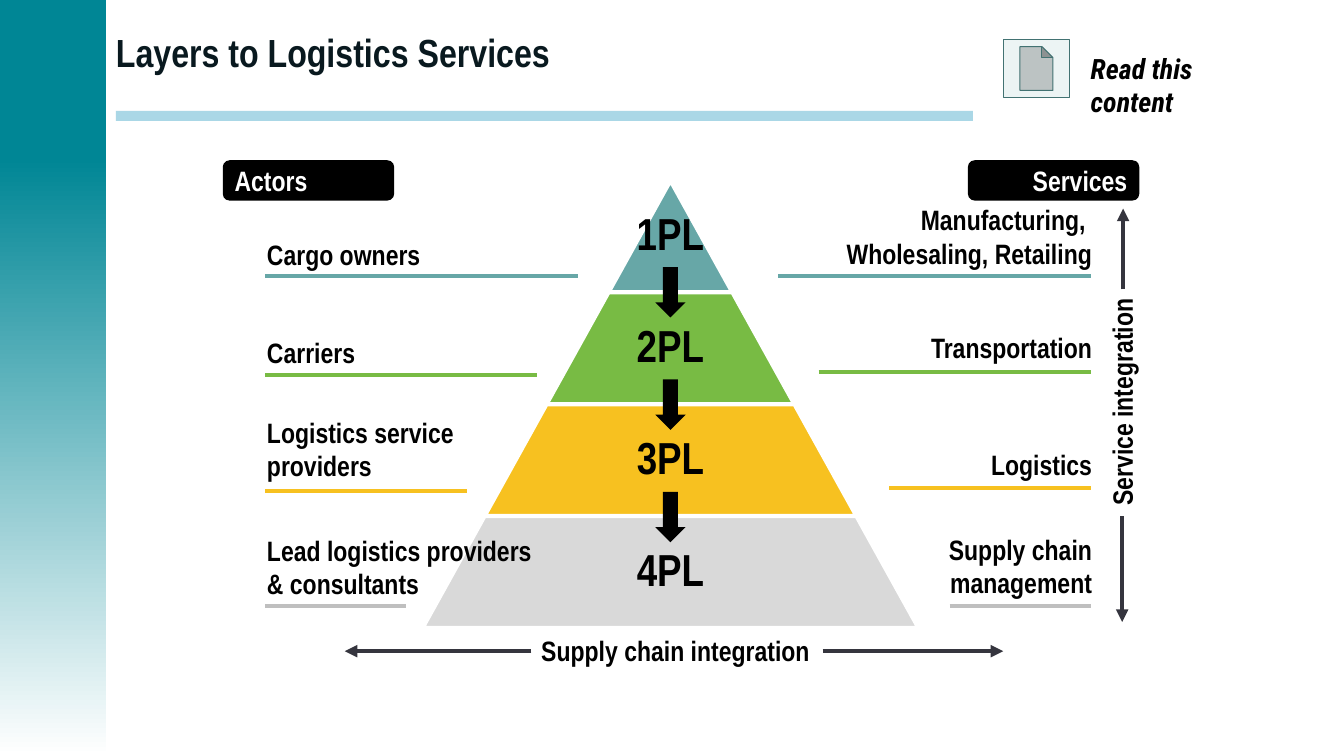
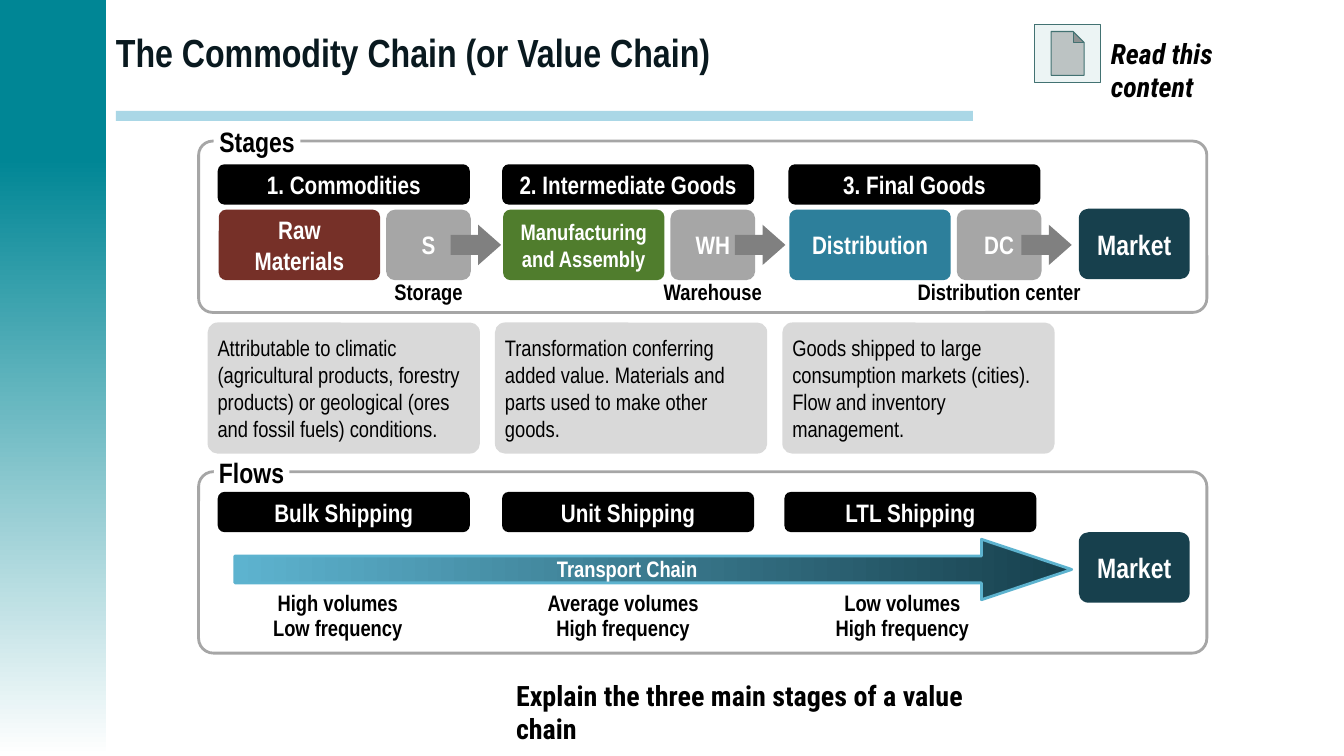
from dataclasses import dataclass, replace
from typing import NamedTuple, Optional

from lxml.etree import SubElement
from pptx import Presentation
from pptx.dml.color import RGBColor
from pptx.enum.shapes import MSO_CONNECTOR, MSO_SHAPE
from pptx.enum.text import MSO_ANCHOR, PP_ALIGN
from pptx.oxml.ns import qn
from pptx.util import Inches, Pt


@dataclass(frozen=True)
class Theme:
    narrow: str = "Arial Narrow"
    condensed: str = "Roboto Condensed"
    title_size: int = 28
    tier_size: int = 32
    label_size: int = 20
    stage_size: int = 18
    detail_size: int = 16
    white: str = "FFFFFF"
    black: str = "000000"
    title: str = "09191F"
    band: str = "008695"
    rule: str = "AAD7E6"
    icon_fill: str = "ECF4F4"
    icon_line: str = "427272"
    arrow: str = "35353E"
    teal: str = "67A7A7"
    green: str = "78BB44"
    yellow: str = "F7C120"
    light_gray: str = "D9D9D9"
    underline_gray: str = "BFBFBF"
    gray: str = "A6A6A6"
    dark_gray: str = "808080"
    navy: str = "17404D"
    sky: str = "5DB3CF"
    maroon: str = "763028"
    forest: str = "507D2D"
    ocean: str = "2D7F9B"


THEME = Theme()


class Box(NamedTuple):
    left: float
    top: float
    width: float
    height: float

    def lengths(self) -> list:
        return [Inches(value) for value in self]


@dataclass(frozen=True)
class TextStyle:
    size: int = THEME.label_size
    color: str = THEME.black
    font: str = THEME.narrow
    bold: bool = True
    italic: bool = False
    align: PP_ALIGN = PP_ALIGN.LEFT
    anchor: MSO_ANCHOR = MSO_ANCHOR.TOP
    spacing: float = 1.0
    inset_x: float = 0.1
    inset_y: float = 0.05


LABEL = TextStyle()
CENTERED_LABEL = replace(LABEL, align=PP_ALIGN.CENTER)
RIGHT_LABEL = replace(LABEL, align=PP_ALIGN.RIGHT)
PROMPT = replace(LABEL, font=THEME.condensed)
TITLE = replace(LABEL, size=THEME.title_size, color=THEME.title, anchor=MSO_ANCHOR.MIDDLE)
TIER = replace(CENTERED_LABEL, size=THEME.tier_size, anchor=MSO_ANCHOR.MIDDLE, spacing=0.9)
BUTTON = replace(CENTERED_LABEL, color=THEME.white, anchor=MSO_ANCHOR.MIDDLE)
STAGE = replace(BUTTON, size=THEME.stage_size)
PANEL_LABEL = replace(CENTERED_LABEL, spacing=0.8, inset_x=0.02, inset_y=0)
DETAIL = replace(CENTERED_LABEL, size=THEME.detail_size, spacing=0.9)
CAPTION = replace(DETAIL, inset_x=0, inset_y=0)
NOTE = TextStyle(size=THEME.detail_size, bold=False, anchor=MSO_ANCHOR.MIDDLE, inset_x=0.07)


@dataclass(frozen=True)
class Layer:
    name: str
    color: str
    underline_color: str
    underline_width: float
    actor: str
    actor_top: float
    actor_line: float
    service: str
    service_top: float
    service_line: float


@dataclass(frozen=True)
class Stage:
    left: float
    header: str
    process: str
    process_size: int
    color: str
    storage: str
    caption: str
    note: str
    shipping: str
    shipping_left: float
    volumes: str
    volumes_center: float


LAYERS = (
    Layer("1PL", THEME.teal, THEME.teal, 3.1, "Cargo owners", 2.31, 2.74,
          "Manufacturing, \nWholesaling, Retailing", 1.96, 2.74),
    Layer("2PL", THEME.green, THEME.green, 2.7, "Carriers", 3.28, 3.72,
          "Transportation", 3.23, 3.69),
    Layer("3PL", THEME.yellow, THEME.yellow, 2.0, "Logistics service\vproviders", 4.07, 4.87,
          "Logistics", 4.39, 4.84),
    Layer("4PL", THEME.light_gray, THEME.underline_gray, 1.4,
          "Lead logistics providers\v& consultants", 5.24, 6.01,
          "Supply chain\vmanagement", 5.23, 6.01),
)

STAGES = (
    Stage(2.16, "1. Commodities", "Raw Materials", THEME.stage_size, THEME.maroon, "S", "Storage",
          "Attributable to climatic (agricultural products, forestry products) "
          "or geological (ores and fossil fuels) conditions.",
          "Bulk Shipping", 2.16, "High volumes\nLow frequency", 3.35),
    Stage(4.98, "2. Intermediate Goods", "Manufacturing and Assembly", THEME.detail_size,
          THEME.forest, "WH", "Warehouse",
          "Transformation conferring added value. Materials and parts used to make other goods.",
          "Unit Shipping", 4.98, "Average volumes\nHigh frequency", 6.18),
    Stage(7.82, "3. Final Goods", "Distribution", THEME.stage_size, THEME.ocean, "DC",
          "Distribution center",
          "Goods shipped to large consumption markets (cities). Flow and inventory management.",
          "LTL Shipping", 7.78, "Low volumes\nHigh frequency", 8.95),
)


def rgb(color: str) -> RGBColor:
    return RGBColor.from_string(color)


def write_text(shape, text: str, style: TextStyle) -> None:
    frame = shape.text_frame
    frame.text = text
    frame.word_wrap = True
    frame.vertical_anchor = style.anchor
    frame.margin_left = frame.margin_right = Inches(style.inset_x)
    frame.margin_top = frame.margin_bottom = Inches(style.inset_y)
    for paragraph in frame.paragraphs:
        paragraph.alignment = style.align
        paragraph.line_spacing = style.spacing
        font = paragraph.font
        font.name, font.size = style.font, Pt(style.size)
        font.bold, font.italic = style.bold, style.italic
        font.color.rgb = rgb(style.color)


def paint(shape, fill: Optional[str], line: Optional[str] = None, width: float = 1) -> None:
    shape.shadow.inherit = False
    if fill:
        shape.fill.solid()
        shape.fill.fore_color.rgb = rgb(fill)
    else:
        shape.fill.background()
    if line:
        shape.line.color.rgb = rgb(line)
        shape.line.width = Pt(width)
    else:
        shape.line.fill.background()


def paint_gradient(shape, start: str, end: str, angle: float) -> None:
    shape.fill.gradient()
    shape.fill.gradient_angle = angle
    for stop, color in zip(shape.fill.gradient_stops, (start, end)):
        stop.color.rgb = rgb(color)


def add_box(slide, kind: MSO_SHAPE, box: Box, fill: Optional[str], text: str = "",
            style: TextStyle = LABEL, line: Optional[str] = None, width: float = 1,
            adjustments: tuple = ()):
    shape = slide.shapes.add_shape(kind, *box.lengths())
    for index, value in enumerate(adjustments):
        shape.adjustments[index] = value
    paint(shape, fill, line, width)
    if text:
        write_text(shape, text, style)
    return shape


def add_rounded(slide, box: Box, fill: str, text: str, style: TextStyle, corner: float = 0.1667):
    return add_box(slide, MSO_SHAPE.ROUNDED_RECTANGLE, box, fill, text, style, adjustments=(corner,))


def add_text(slide, box: Box, text: str, style: TextStyle = LABEL):
    shape = slide.shapes.add_textbox(*box.lengths())
    write_text(shape, text, style)
    return shape


def add_line(slide, start: tuple, end: tuple, color: str, arrow: bool = False) -> None:
    points = [Inches(value) for value in (*start, *end)]
    connector = slide.shapes.add_connector(MSO_CONNECTOR.STRAIGHT, *points)
    connector.line.color.rgb = rgb(color)
    connector.line.width = Pt(3)
    if arrow:
        SubElement(connector.line._get_or_add_ln(), qn("a:tailEnd"), type="triangle")
    SubElement(connector.element.spPr, qn("a:effectLst"))


def decorate_layout(layout, slide) -> None:
    top_band = add_box(slide, MSO_SHAPE.RECTANGLE, Box(-0.02, -0.01, 1.07, 1.58), THEME.band)
    fading_band = add_box(slide, MSO_SHAPE.RECTANGLE, Box(-0.02, 1.57, 1.07, 5.93), THEME.band)
    paint_gradient(fading_band, THEME.band, THEME.white, 270)
    rule = add_box(slide, MSO_SHAPE.RECTANGLE, Box(1.15, 1.1, 8.5, 0.1), THEME.rule)
    for shape in (top_band, fading_band, rule):
        layout.shapes.element.append(shape.element)


def start_slide(slide, title: str, icon_left: float, icon_top: float, prompt_left: float) -> None:
    placeholder = slide.shapes.title
    placeholder.left, placeholder.top, placeholder.width, placeholder.height = \
        Box(1.05, 0.01, 11.98, 1).lengths()
    write_text(placeholder, title, TITLE)
    add_box(slide, MSO_SHAPE.ACTION_BUTTON_DOCUMENT, Box(icon_left, icon_top, 0.66, 0.58),
            THEME.icon_fill, line=THEME.icon_line, width=0.75)
    add_text(slide, Box(prompt_left, icon_top + 0.07, 1.5, 0.77), "Read this content",
             replace(PROMPT, italic=True))


def add_tier(slide, index: int, layer: Layer) -> None:
    center, apex, height, spread = 6.65, 1.79, 1.11, 0.615
    top, bottom = apex + index * height, apex + (index + 1) * height
    upper, lower = index * spread, (index + 1) * spread
    corners = [(center - lower, bottom), (center - upper, top),
               (center + upper, top), (center + lower, bottom)]
    points = [(Inches(x), Inches(y)) for x, y in corners]
    builder = slide.shapes.build_freeform(*points[0])
    builder.add_line_segments(points[1:], close=True)
    tier = builder.convert_to_shape()
    paint(tier, layer.color, THEME.white, 3)
    write_text(tier, layer.name, TIER)


def build_layers(slide) -> None:
    start_slide(slide, "Layers to Logistics Services", 9.95, 0.39, 10.72)
    line_left, line_right = 2.63, 10.82
    for index, layer in enumerate(LAYERS):
        add_tier(slide, index, layer)
    for index, layer in enumerate(LAYERS):
        if index:
            add_box(slide, MSO_SHAPE.DOWN_ARROW, Box(6.5, 2.65 + (index - 1) * 1.115, 0.3, 0.5),
                    THEME.black)
        add_text(slide, Box(2.55, layer.actor_top, 3, 0.77), layer.actor)
        add_text(slide, Box(8.03, layer.service_top, 2.9, 0.77), layer.service, RIGHT_LABEL)
        add_line(slide, (line_left, layer.actor_line),
                 (line_left + layer.underline_width, layer.actor_line), layer.underline_color)
        add_line(slide, (line_right - layer.underline_width, layer.service_line),
                 (line_right, layer.service_line), layer.underline_color)
    for left, text, align in ((2.21, "Actors", PP_ALIGN.LEFT), (9.6, "Services", PP_ALIGN.RIGHT)):
        add_rounded(slide, Box(left, 1.59, 1.7, 0.4), THEME.black, text, replace(BUTTON, align=align))
    add_text(slide, Box(5.2, 6.24, 3, 0.44), "Supply chain integration", CENTERED_LABEL)
    vertical_label = add_text(slide, Box(9.88, 3.77, 2.5, 0.44), "Service integration", CENTERED_LABEL)
    vertical_label.rotation = 270
    for start, end in (((5.27, 6.46), (3.42, 6.46)), ((8.16, 6.46), (9.95, 6.46)),
                       ((11.14, 2.87), (11.14, 2.07)), ((11.13, 5.12), (11.13, 6.17))):
        add_line(slide, start, end, THEME.arrow, arrow=True)


def add_panel(slide, top: float, height: float, label: str, label_width: float,
              market_top: float) -> None:
    add_box(slide, MSO_SHAPE.ROUNDED_RECTANGLE, Box(1.97, top, 10, height), None,
            line=THEME.gray, width=2, adjustments=(0.082,))
    add_box(slide, MSO_SHAPE.RECTANGLE, Box(2.12, top - 0.1, label_width, 0.27), THEME.white,
            label, PANEL_LABEL)
    add_rounded(slide, Box(10.7, market_top, 1.1, 0.7), THEME.navy, "Market", BUTTON, 0.14)


def add_stage(slide, index: int, stage: Stage) -> None:
    storage = Box(stage.left + 1.67, 2.08, 0.84, 0.7)
    add_rounded(slide, Box(stage.left, 1.63, 2.5, 0.4), THEME.black, stage.header, STAGE)
    add_rounded(slide, Box(stage.left + 0.01, 2.08, 1.6, 0.7), stage.color, stage.process,
                replace(STAGE, size=stage.process_size, inset_x=0.12), 0.105)
    add_rounded(slide, storage, THEME.gray, stage.storage, STAGE, 0.126)
    add_box(slide, MSO_SHAPE.RIGHT_ARROW, Box(stage.left + 2.31, 2.23, 0.5, 0.4),
            THEME.dark_gray, adjustments=(0.5, 0.566))
    add_text(slide, Box(storage.left + storage.width / 2 - 0.9, 2.79, 1.8, 0.24), stage.caption, CAPTION)
    add_rounded(slide, Box(2.06 + index * 2.85, 3.2, 2.7, 1.3), THEME.light_gray, stage.note, NOTE, 0.075)
    add_rounded(slide, Box(stage.shipping_left, 4.88, 2.5, 0.4), THEME.black, stage.shipping, STAGE)
    add_text(slide, Box(stage.volumes_center - 1, 5.83, 2, 0.59), stage.volumes, DETAIL)


def build_chain(slide) -> None:
    start_slide(slide, "The Commodity Chain (or Value Chain)", 10.26, 0.24, 10.92)
    add_panel(slide, 1.4, 1.7, "Stages", 0.86, 2.07)
    add_panel(slide, 4.68, 1.8, "Flows", 0.75, 5.28)
    transport = add_box(slide, MSO_SHAPE.RIGHT_ARROW, Box(2.33, 5.35, 8.3, 0.6), THEME.sky,
                        line=THEME.sky, width=2, adjustments=(0.444, 1.492))
    paint_gradient(transport, THEME.sky, THEME.navy, 0)
    add_text(slide, Box(5.32, 5.46, 1.8, 0.37), "Transport Chain",
             replace(DETAIL, color=THEME.white, spacing=1.0))
    for index, stage in enumerate(STAGES):
        add_stage(slide, index, stage)
    add_text(slide, Box(5.02, 6.68, 5.1, 0.77), "Explain the three main stages of a value chain", PROMPT)


def main() -> None:
    presentation = Presentation()
    presentation.slide_width, presentation.slide_height = Inches(13.33), Inches(7.5)
    layout = presentation.slide_layouts[5]
    for placeholder in list(layout.placeholders):
        if placeholder.placeholder_format.idx:
            layout.shapes.element.remove(placeholder.element)
    slides = [presentation.slides.add_slide(layout) for _ in range(2)]
    decorate_layout(layout, slides[0])
    build_layers(slides[0])
    build_chain(slides[1])
    presentation.save("out.pptx")


if __name__ == "__main__":
    main()
